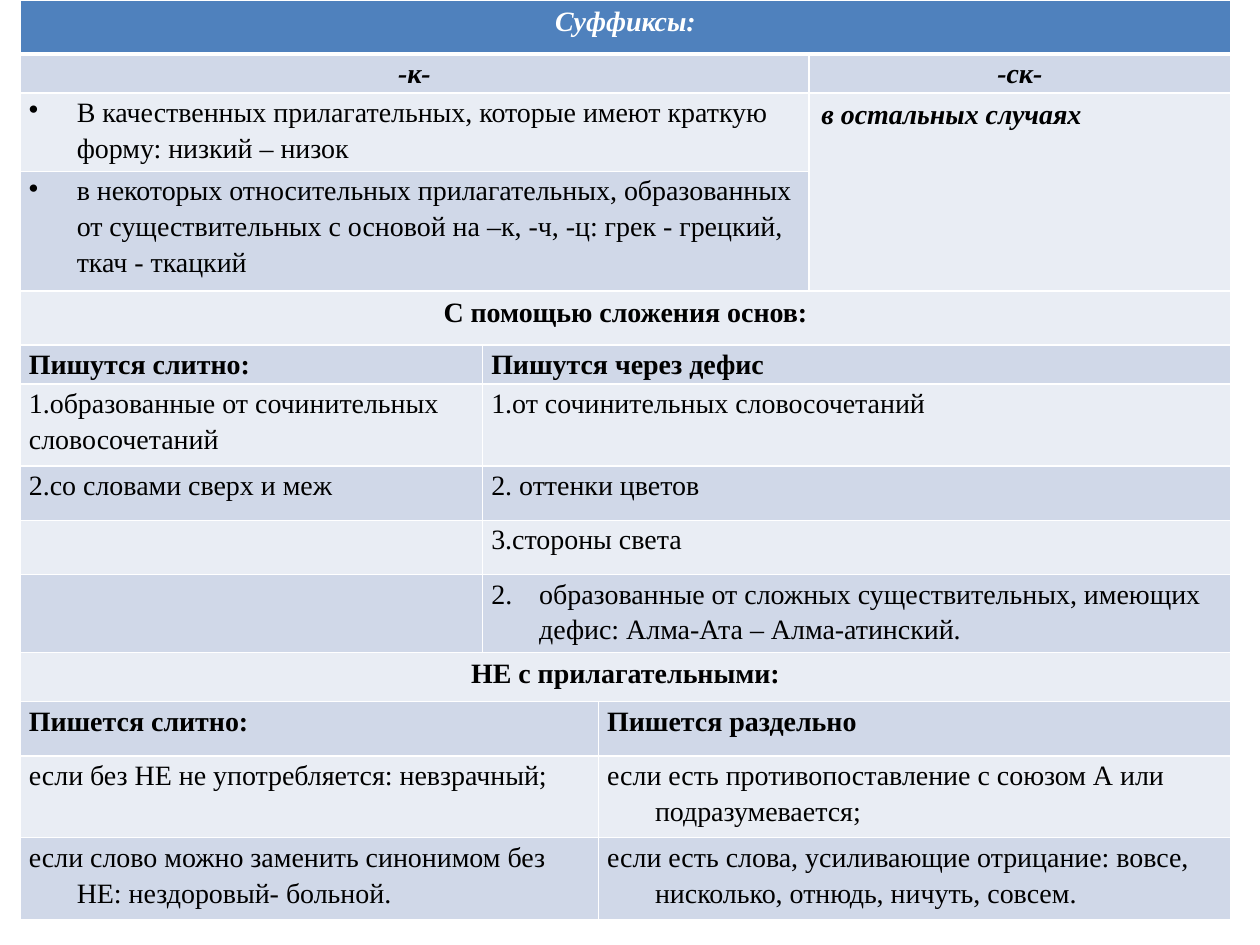
import lxml.etree
import pptx
import pptx.dml.color
import pptx.enum.text
import pptx.oxml.ns
import pptx.util

Inches = pptx.util.Inches
Pt = pptx.util.Pt
qn = pptx.oxml.ns.qn

FONT = "Times New Roman"
HEADER_FILL = "4F81BD"
BAND_FILLS = ("E9EDF4", "D0D8E8")
HANG = 0.38

COLUMN_WIDTHS = (3.67, 0.92, 1.67, 3.35)
ROW_HEIGHTS = (0.43, 0.31, 0.62, 0.95, 0.43, 0.31, 0.65,
               0.43, 0.43, 0.62, 0.39, 0.43, 0.65, 0.65)

STYLES = {
    "title": dict(bold=True, italic=True, centered=True, color="FFFFFF"),
    "suffix": dict(bold=True, italic=True, centered=True, compact=True),
    "remark": dict(bold=True, italic=True),
    "section": dict(bold=True, centered=True),
    "heading": dict(bold=True, compact=True),
    "rule": dict(compact=True),
    "hanging": dict(compact=True, marker=("a:buNone", {})),
    "bullet": dict(compact=True, marker=("a:buChar", {"char": "•"})),
    "numbered": dict(compact=True, marker=(
        "a:buAutoNum", {"type": "arabicPeriod", "startAt": "2"})),
}

# row, column, rows spanned, columns spanned, style, text
CELLS = (
    (0, 0, 1, 4, "title", "Суффиксы:"),
    (1, 0, 1, 3, "suffix", "-к-"),
    (1, 3, 1, 1, "suffix", "-ск-"),
    (2, 0, 1, 3, "bullet", "В качественных прилагательных, которые имеют "
     "краткую форму: низкий – низок"),
    (2, 3, 2, 1, "remark", "в остальных случаях"),
    (3, 0, 1, 3, "bullet", "в некоторых относительных прилагательных, "
     "образованных от существительных с основой на –к, -ч, -ц: "
     "грек - грецкий, ткач - ткацкий"),
    (4, 0, 1, 4, "section", "С помощью сложения основ:"),
    (5, 0, 1, 1, "heading", "Пишутся слитно:"),
    (5, 1, 1, 3, "heading", "Пишутся через дефис"),
    (6, 0, 1, 1, "rule", "1.образованные от сочинительных словосочетаний"),
    (6, 1, 1, 3, "rule", "1.от сочинительных словосочетаний"),
    (7, 0, 1, 1, "rule", "2.со словами сверх и меж"),
    (7, 1, 1, 3, "rule", "2. оттенки цветов"),
    (8, 1, 1, 3, "rule", "3.стороны света"),
    (9, 1, 1, 3, "numbered", "образованные от сложных существительных, "
     "имеющих дефис: Алма-Ата – Алма-атинский."),
    (10, 0, 1, 4, "section", "НЕ с прилагательными:"),
    (11, 0, 1, 2, "heading", "Пишется слитно:"),
    (11, 2, 1, 2, "heading", "Пишется раздельно"),
    (12, 0, 1, 2, "hanging", "если без НЕ не употребляется: невзрачный;"),
    (12, 2, 1, 2, "hanging", "если есть противопоставление с союзом А или "
     "подразумевается;"),
    (13, 0, 1, 2, "hanging", "если слово можно заменить синонимом без НЕ: "
     "нездоровый- больной."),
    (13, 2, 1, 2, "hanging", "если есть слова, усиливающие отрицание: вовсе, "
     "нисколько, отнюдь, ничуть, совсем."),
)


def rgb(color):
    return pptx.dml.color.RGBColor.from_string(color)


def add_borders(cell, top, bottom):
    properties = cell._tc.get_or_add_tcPr()
    for side, width in (("L", 1), ("R", 1), ("T", top), ("B", bottom)):
        line = lxml.etree.SubElement(properties, qn("a:ln" + side), w=str(Pt(width)))
        solid = lxml.etree.SubElement(line, qn("a:solidFill"))
        lxml.etree.SubElement(solid, qn("a:srgbClr"), val="FFFFFF")


def fill_cell(cell, color):
    cell.fill.solid()
    cell.fill.fore_color.rgb = rgb(color)


def add_marker(paragraph, marker):
    tag, attributes = marker
    properties = paragraph._p.get_or_add_pPr()
    properties.set("marL", str(Inches(HANG)))
    properties.set("indent", str(-Inches(HANG)))
    lxml.etree.SubElement(properties, qn(tag), attributes)


def write_cell(cell, text, bold=False, italic=False, centered=False,
               compact=False, color="000000", marker=None):
    cell.text_frame.text = text
    paragraph = cell.text_frame.paragraphs[0]
    if centered:
        paragraph.alignment = pptx.enum.text.PP_ALIGN.CENTER
    if compact:
        cell.margin_left = cell.margin_right = Inches(0.07)
        cell.margin_top = cell.margin_bottom = 0
        paragraph.line_spacing = 1.15
    if marker:
        add_marker(paragraph, marker)
    font = paragraph.runs[0].font
    font.name = FONT
    font.size = Pt(16)
    font.bold = bold
    font.italic = italic
    font.color.rgb = rgb(color)


def add_rules_table(slide):
    rules = slide.shapes.add_table(
        len(ROW_HEIGHTS), len(COLUMN_WIDTHS), Inches(0.16), 0,
        Inches(sum(COLUMN_WIDTHS)), Inches(sum(ROW_HEIGHTS))).table
    for column, width in zip(rules.columns, COLUMN_WIDTHS):
        column.width = Inches(width)
    for index, (row, height) in enumerate(zip(rules.rows, ROW_HEIGHTS)):
        row.height = Inches(height)
        for cell in row.cells:
            add_borders(cell, 3 if index == 1 else 1, 3 if index == 0 else 1)
            fill_cell(cell, BAND_FILLS[index % 2] if index else HEADER_FILL)
    return rules


def main():
    presentation = pptx.Presentation()
    presentation.slide_width = Inches(10)
    presentation.slide_height = Inches(7.5)
    slide = presentation.slides.add_slide(presentation.slide_layouts[6])
    rules = add_rules_table(slide)
    for row, column, row_span, column_span, style, text in CELLS:
        cell = rules.cell(row, column)
        if row_span * column_span > 1:
            cell.merge(rules.cell(row + row_span - 1, column + column_span - 1))
        write_cell(cell, text, **STYLES[style])
    presentation.save("out.pptx")


if __name__ == "__main__":
    main()
